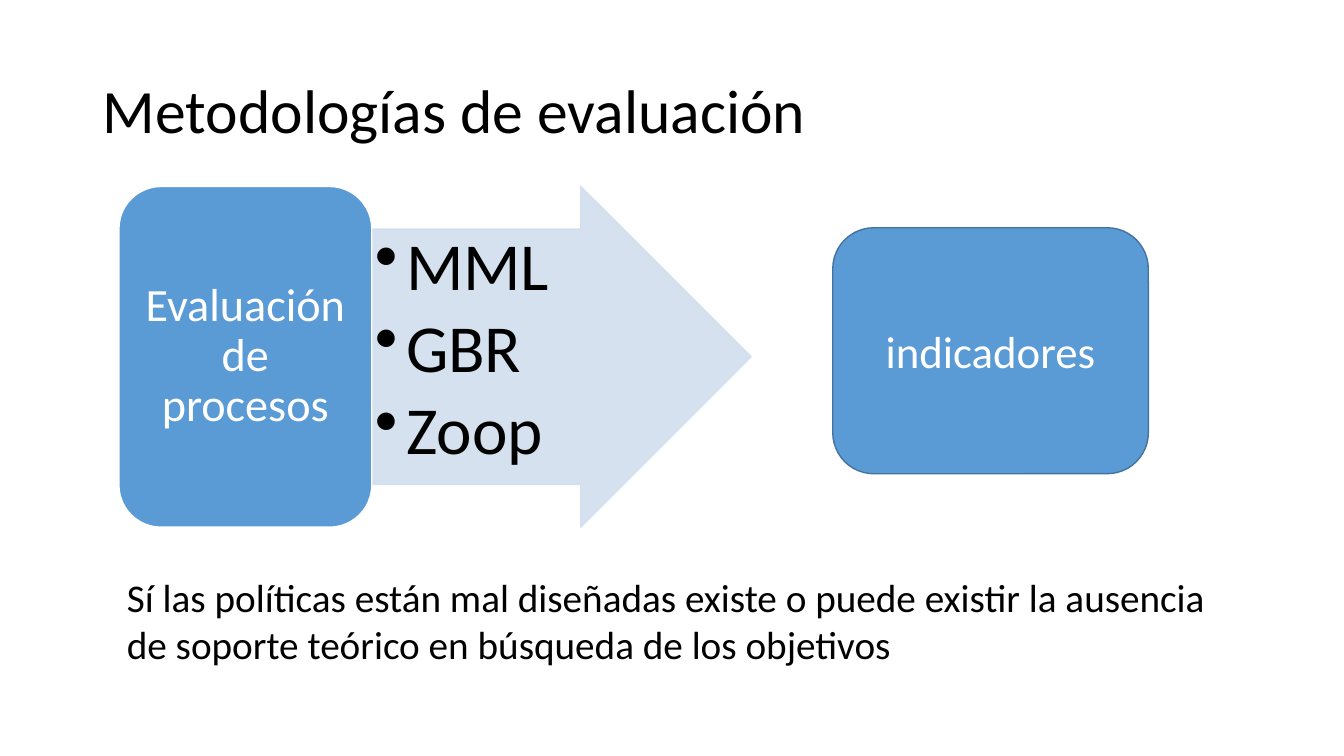
from lxml.etree import SubElement
from pptx import Presentation
from pptx.dml.color import RGBColor
from pptx.enum.shapes import MSO_SHAPE as Shape
from pptx.enum.text import MSO_ANCHOR as Anchor, MSO_AUTO_SIZE as AutoSize, PP_ALIGN as Align
from pptx.oxml.ns import qn
from pptx.util import Inches, Pt

BLUE, PALE, EDGE, WHITE, BLACK = "5B9BD5", "D2DEEF", "43739E", "FFFFFF", "000000"


def color(value):
    """Turn a hex string into a colour."""
    return RGBColor.from_string(value)


def write(frame, lines, size, ink=BLACK, align=Align.LEFT, anchor=Anchor.TOP,
          inset=(0.1, 0.05), spacing=1, after=0, bullet=False):
    """Fill a text frame with evenly formatted paragraphs."""
    frame.word_wrap = True
    frame.auto_size = AutoSize.NONE
    frame.vertical_anchor = anchor
    frame.margin_left = frame.margin_right = Inches(inset[0])
    frame.margin_top = frame.margin_bottom = Inches(inset[1])
    frame.text = "\n".join(lines)
    for para in frame.paragraphs:
        para.alignment = align
        para.line_spacing = spacing
        para.space_after = Pt(after)
        if bullet:
            props = para._p.get_or_add_pPr()
            props.set("marL", str(Inches(0.31)))
            props.set("indent", str(-Inches(0.31)))
            SubElement(props, qn("a:buChar"), char="•")
        para.font.name = "Calibri"
        para.font.size = Pt(size)
        para.font.color.rgb = color(ink)


def add_block(page, kind, box, fill, line):
    """Draw a filled and outlined preset shape."""
    block = page.shapes.add_shape(kind, *map(Inches, box))
    block.shadow.inherit = False
    block.fill.solid()
    block.fill.fore_color.rgb = color(fill)
    block.line.color.rgb = color(line)
    block.line.width = Pt(1)
    return block


def add_title(page, box, text):
    """Place and format the title placeholder."""
    title = page.shapes.title
    title.left, title.top, title.width, title.height = map(Inches, box)
    write(title.text_frame, [text], 44, anchor=Anchor.MIDDLE, spacing=0.9)


def add_process(page, box, label, methods):
    """Draw the process block and the arrow that lists its methods."""
    left, top, width, height = box
    block_width = 0.4 * width
    arrow = add_block(page, Shape.RIGHT_ARROW,
                      (left + block_width, top, width - block_width, height), PALE, PALE)
    arrow.adjustments[0], arrow.adjustments[1] = 0.75, 0.5
    for fill in arrow._element.spPr.iter(qn("a:srgbClr")):
        SubElement(fill, qn("a:alpha"), val="90000")
    write(arrow.text_frame, methods, 48, inset=(0.03, 0.03), spacing=0.9, after=7, bullet=True)
    block = add_block(page, Shape.ROUNDED_RECTANGLE, (left, top, block_width, height), BLUE, WHITE)
    write(block.text_frame, [label], 33, WHITE, Align.CENTER, Anchor.MIDDLE, (0.14, 0.07), 0.9)


def add_result(page, box, label):
    """Draw the block that names the result."""
    block = add_block(page, Shape.ROUNDED_RECTANGLE, box, BLUE, EDGE)
    write(block.text_frame, [label], 32, WHITE, Align.CENTER, Anchor.MIDDLE)


def add_remark(page, box, text):
    """Place the closing remark."""
    remark = page.shapes.add_textbox(*map(Inches, box))
    write(remark.text_frame, [text], 28)


def main():
    """Build the slide and save it."""
    deck = Presentation()
    deck.slide_width, deck.slide_height = Inches(13.33), Inches(7.5)
    page = deck.slides.add_slide(deck.slide_layouts[5])
    add_title(page, (0.92, 0.4, 11.5, 1.45), "Metodologías de evaluación")
    add_process(page, (1.18, 1.85, 6.27, 3.38), "Evaluación de procesos", ["MML", "GBR", "Zoop"])
    add_remark(page, (1.16, 5.64, 11.26, 1.04),
               "Sí las políticas están mal diseñadas existe o puede existir la ausencia "
               "de soporte teórico en búsqueda de los objetivos")
    add_result(page, (8.26, 2.26, 3.13, 2.44), "indicadores")
    deck.save("out.pptx")


if __name__ == "__main__":
    main()
